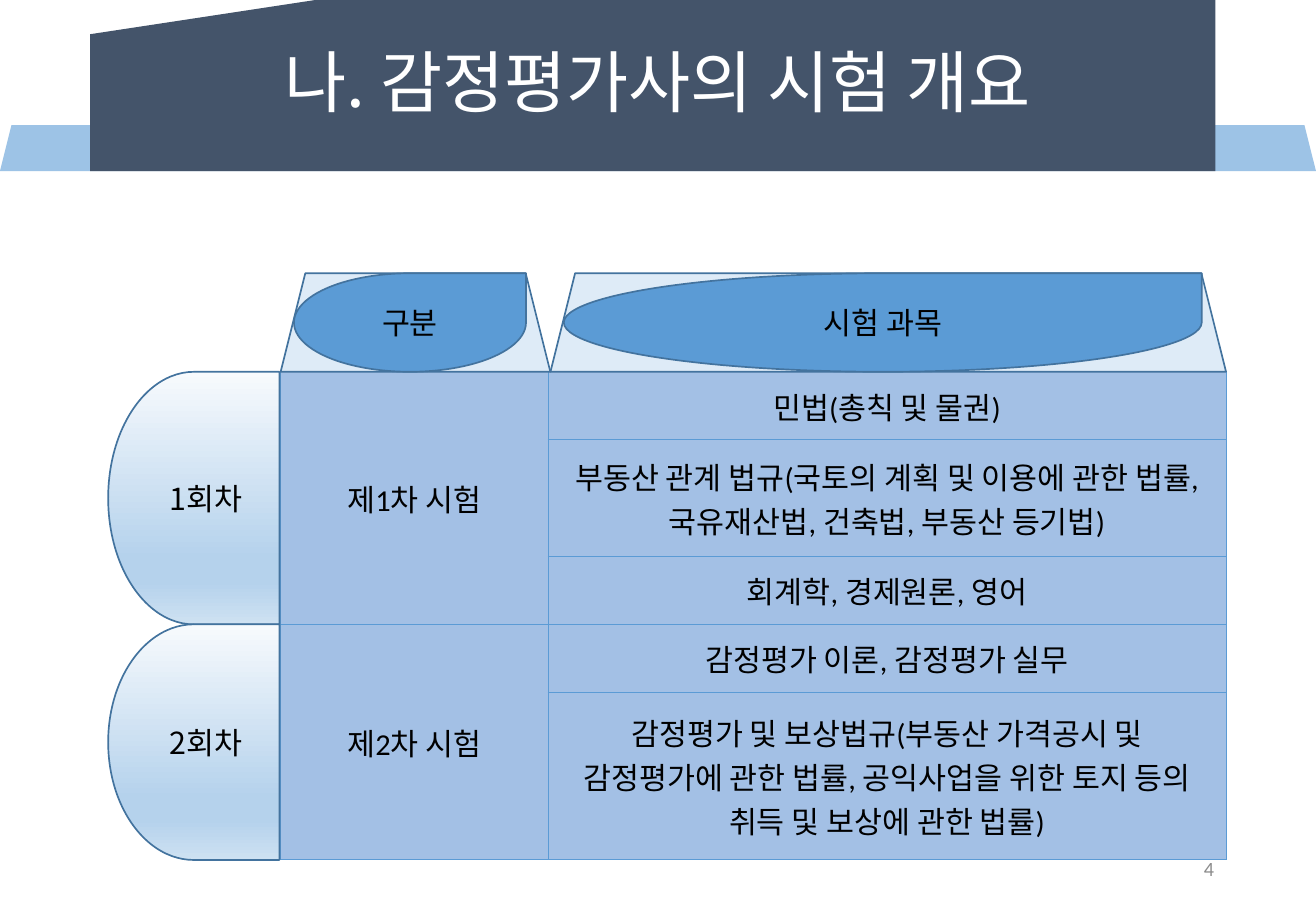
from dataclasses import dataclass
from lxml.etree import SubElement as Sub
from pptx import Presentation
from pptx.dml.color import RGBColor as RGB
from pptx.enum.shapes import MSO_SHAPE as Form
from pptx.enum.text import MSO_ANCHOR as Anchor, PP_ALIGN as Align
from pptx.oxml.ns import qn
from pptx.util import Pt


@dataclass
class Theme:
    navy: str = "44546A"
    sky: str = "9DC3E6"
    blue: str = "5B9BD5"
    pale: str = "DEEBF7"
    edge: str = "43739E"
    cell: str = "A3C0E5"
    black: str = "000000"
    white: str = "FFFFFF"
    gray: str = "8C8C8C"
    fade: tuple = ((0, "F7FAFD"), (74, "B5D2EC"), (83, "B5D2EC"), (100, "CEE1F2"))
    latin: str = "Calibri"
    korean: str = "Noto Sans CJK KR"
    title: int = 40
    body: int = 18
    small: int = 12


theme = Theme()
deck = Presentation()
deck.slide_width, deck.slide_height = Pt(779.8), Pt(540)
slide = deck.slides.add_slide(deck.slide_layouts[6])


def write(frame, text, size, color, face, align=Align.CENTER):
    frame.text = text
    frame.word_wrap = True
    frame.vertical_anchor = Anchor.MIDDLE
    para = frame.paragraphs[0]
    para.alignment = align
    for run in para.runs:
        run.font.size = Pt(size)
        run.font.name = face
        run.font.color.rgb = RGB.from_string(color)
        Sub(run.font._element, qn("a:ea"), typeface=theme.korean)


def draw(form, box, fill, line=None):
    shape = slide.shapes.add_shape(form, *map(Pt, box))
    shape.shadow.inherit = False
    if fill:
        shape.fill.solid()
        shape.fill.fore_color.rgb = RGB.from_string(fill)
    if line:
        shape.line.color.rgb = RGB.from_string(line)
        shape.line.width = Pt(1)
    else:
        shape.line.fill.background()
    return shape


draw(Form.TRAPEZOID, (0, 74.2, 779.8, 27.2), theme.sky)
draw(Form.FLOWCHART_CARD, (53.5, 0, 666.7, 101.4), theme.navy)

left, top = 166.3, 220.4
cols = (158.4, 401.8)
rows = (40.3, 69.1, 40.3, 40.3, 99.4)
exams = ((0, 2, "제1차 시험", "1회차"), (3, 4, "제2차 시험", "2회차"))
topics = (
    "민법(총칙 및 물권)",
    "부동산 관계 법규(국토의 계획 및 이용에 관한 법률, 국유재산법, 건축법, 부동산 등기법)",
    "회계학, 경제원론, 영어",
    "감정평가 이론, 감정평가 실무",
    "감정평가 및 보상법규(부동산 가격공시 및 감정평가에 관한 법률, 공익사업을 위한 토지 등의 취득 및 보상에 관한 법률)",
)

frame = slide.shapes.add_table(
    len(rows), len(cols), Pt(left), Pt(top), Pt(sum(cols)), Pt(sum(rows)))
table = frame.table
table.first_row = table.horz_banding = False
for col, width in zip(table.columns, cols):
    col.width = Pt(width)
for row, height in zip(table.rows, rows):
    row.height = Pt(height)

for cell in table.iter_cells():
    props = cell._tc.get_or_add_tcPr()
    for side in ("L", "R", "T", "B"):
        rule = Sub(props, qn(f"a:ln{side}"), w=str(Pt(0.5)))
        Sub(Sub(rule, qn("a:solidFill")), qn("a:srgbClr"), val=theme.blue)
    cell.fill.solid()
    cell.fill.fore_color.rgb = RGB.from_string(theme.cell)
    cell.vertical_anchor = Anchor.MIDDLE

for first, last, exam, _ in exams:
    table.cell(first, 0).merge(table.cell(last, 0))
    write(table.cell(first, 0).text_frame, exam, theme.body, theme.black, theme.latin)
    table.cell(first, 0).vertical_anchor = Anchor.MIDDLE
for index, topic in enumerate(topics):
    write(table.cell(index, 1).text_frame, topic, theme.body, theme.black, theme.latin)
    table.cell(index, 1).vertical_anchor = Anchor.MIDDLE

page = slide.shapes.add_textbox(Pt(550.8), Pt(500.4), Pt(175.7), Pt(28.8))
write(page.text_frame, "4", theme.small, theme.gray, theme.latin, Align.RIGHT)

title = slide.shapes.add_textbox(Pt(0), Pt(-1.4), Pt(779.8), Pt(104.4))
write(title.text_frame, "나. 감정평가사의 시험 개요", theme.title, theme.white, theme.korean)
title.text_frame.paragraphs[0].line_spacing = 0.9

for x, width, label in ((left, 159.8, "구분"), (326.2, 400.3, "시험 과목")):
    draw(Form.TRAPEZOID, (x, 162, width, 58.4), theme.pale, theme.edge)
    drop = draw(Form.TEAR, (x + 7.9, 162, width - 22.3, 58.4), theme.blue, theme.edge)
    write(drop.text_frame, label, theme.body, theme.black, theme.korean)

for first, last, _, label in exams:
    box = (64.1, top + sum(rows[:first]), 101.5, sum(rows[first:last + 1]))
    tab = draw(Form.FLOWCHART_DELAY, box, None, theme.edge)
    tab.fill.gradient()
    tab.fill.gradient_angle = 270
    props = tab._element.spPr
    props.find(qn("a:xfrm")).set("flipH", "1")
    stops = props.find(".//" + qn("a:gsLst"))
    stops.clear()
    for place, color in theme.fade:
        stop = Sub(stops, qn("a:gs"), pos=str(place * 1000))
        Sub(stop, qn("a:srgbClr"), val=color)
    write(tab.text_frame, label, theme.body, theme.black, theme.korean)

deck.save("out.pptx")
